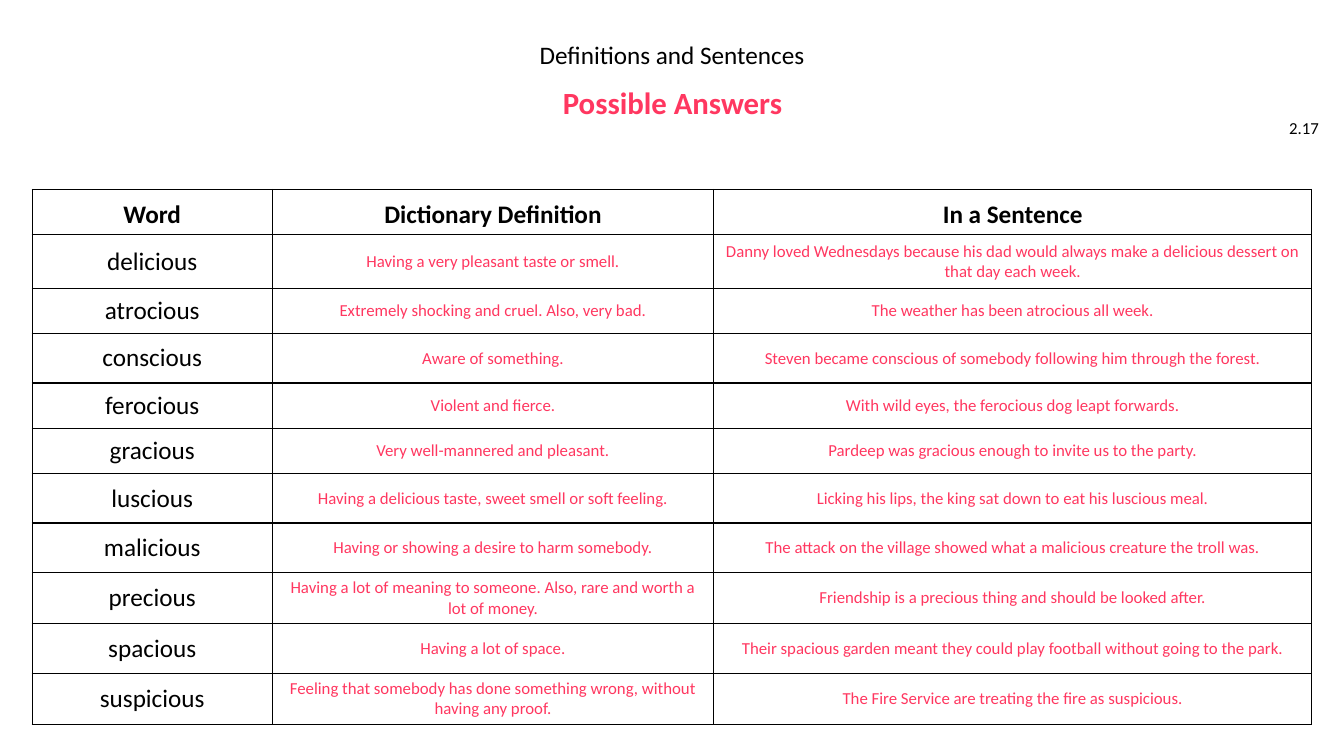
import pptx
import pptx.util
import pptx.dml.color
import pptx.enum.text
import pptx.oxml
import pptx.oxml.ns

Inches = pptx.util.Inches
ALIGN = pptx.enum.text.PP_ALIGN
ANCHOR = pptx.enum.text.MSO_ANCHOR
BLACK, PINK = "000000", "FF3760"

HEADINGS = ["Word", "Dictionary Definition", "In a Sentence"]
COLUMN_WIDTHS = [2.38, 4.38, 5.93]
HEADING_HEIGHT = 0.45
ANSWERS = [
    (0.53, "delicious", "Having a very pleasant taste or smell.",
     "Danny loved Wednesdays because his dad would always make a delicious dessert on that day each week."),
    (0.45, "atrocious", "Extremely shocking and cruel. Also, very bad.",
     "The weather has been atrocious all week."),
    (0.49, "conscious", "Aware of something.",
     "Steven became conscious of somebody following him through the forest."),
    (0.45, "ferocious", "Violent and fierce.",
     "With wild eyes, the ferocious dog leapt forwards."),
    (0.45, "gracious", "Very well-mannered and pleasant.",
     "Pardeep was gracious enough to invite us to the party."),
    (0.49, "luscious", "Having a delicious taste, sweet smell or soft feeling.",
     "Licking his lips, the king sat down to eat his luscious meal."),
    (0.49, "malicious", "Having or showing a desire to harm somebody.",
     "The attack on the village showed what a malicious creature the troll was."),
    (0.51, "precious", "Having a lot of meaning to someone. Also, rare and worth a lot of money.",
     "Friendship is a precious thing and should be looked after."),
    (0.49, "spacious", "Having a lot of space.",
     "Their spacious garden meant they could play football without going to the park."),
    (0.51, "suspicious", "Feeling that somebody has done something wrong, without having any proof.",
     "The Fire Service are treating the fire as suspicious."),
]


def colour(value):
    """Turn a hex string into a colour."""
    return pptx.dml.color.RGBColor.from_string(value)


class WordSheet:
    """Hold the style and the current slide."""

    font = "Calibri"
    border_points = 1

    def __init__(self, page):
        """Start on a white page."""
        self.page = page
        page.background.fill.solid()
        page.background.fill.fore_color.rgb = colour("FFFFFF")

    def add_text(self, frame, text, size=18, ink=BLACK, bold=False, align=ALIGN.CENTER, spacing=None):
        """Put one formatted paragraph into a text frame."""
        para = frame.paragraphs[0]
        para.alignment = align
        if spacing:
            para.line_spacing = spacing
        span = para.add_run()
        span.text = text
        span.font.name = self.font
        span.font.size = pptx.util.Pt(size)
        span.font.bold = bold
        span.font.color.rgb = colour(ink)

    def text_box(self, left, top, width, height, text, anchor=ANCHOR.MIDDLE, **style):
        """Add a wrapped text box."""
        box = self.page.shapes.add_textbox(Inches(left), Inches(top), Inches(width), Inches(height))
        box.text_frame.word_wrap = True
        box.text_frame.vertical_anchor = anchor
        self.add_text(box.text_frame, text, **style)

    def border(self, cell):
        """Draw a black line on each side of a cell."""
        width = pptx.util.Pt(self.border_points)
        namespace = pptx.oxml.ns.nsdecls("a")
        properties = cell._tc.get_or_add_tcPr()
        for position, side in enumerate(("lnL", "lnR", "lnT", "lnB")):
            properties.insert(position, pptx.oxml.parse_xml(
                f'<a:{side} {namespace} w="{width}"><a:solidFill>'
                f'<a:srgbClr val="{BLACK}"/></a:solidFill></a:{side}>'))

    def cell(self, cell, text, anchor=ANCHOR.MIDDLE, **style):
        """Fill in one table cell."""
        cell.fill.background()
        cell.vertical_anchor = anchor
        cell.margin_left = cell.margin_right = Inches(0.11)
        cell.margin_top = cell.margin_bottom = Inches(0.05)
        self.add_text(cell.text_frame, text, **style)
        self.border(cell)

    def table(self, left, top, widths, headings, heading_height, answers):
        """Add the table of words, definitions and sentences."""
        heights = [heading_height] + [answer[0] for answer in answers]
        grid = self.page.shapes.add_table(
            len(heights), len(widths), Inches(left), Inches(top),
            Inches(sum(widths)), Inches(sum(heights))).table
        grid.first_row = grid.horz_banding = False
        for column, width in zip(grid.columns, widths):
            column.width = Inches(width)
        for row, height in zip(grid.rows, heights):
            row.height = Inches(height)
        for column, heading in enumerate(headings):
            self.cell(grid.cell(0, column), heading, anchor=ANCHOR.BOTTOM, bold=True)
        for row, (_, word, *details) in enumerate(answers, 1):
            self.cell(grid.cell(row, 0), word)
            for column, detail in enumerate(details, 1):
                self.cell(grid.cell(row, column), detail, size=12, ink=PINK)


def main():
    """Build the slide and save it."""
    deck = pptx.Presentation()
    deck.slide_width, deck.slide_height = Inches(13.33), Inches(7.5)
    sheet = WordSheet(deck.slides.add_slide(deck.slide_layouts[6]))
    sheet.text_box(12.55, 1.07, 0.63, 0.4, "2.17", size=12, align=ALIGN.RIGHT)
    sheet.text_box(3.82, 0.37, 5.69, 0.35, "Definitions and Sentences", anchor=ANCHOR.TOP, spacing=0.9)
    sheet.text_box(2.09, 0.84, 9.16, 0.4, "Possible Answers", size=22, ink=PINK, bold=True, spacing=0.9)
    sheet.table(0.32, 1.88, COLUMN_WIDTHS, HEADINGS, HEADING_HEIGHT, ANSWERS)
    deck.save("out.pptx")


if __name__ == "__main__":
    main()
